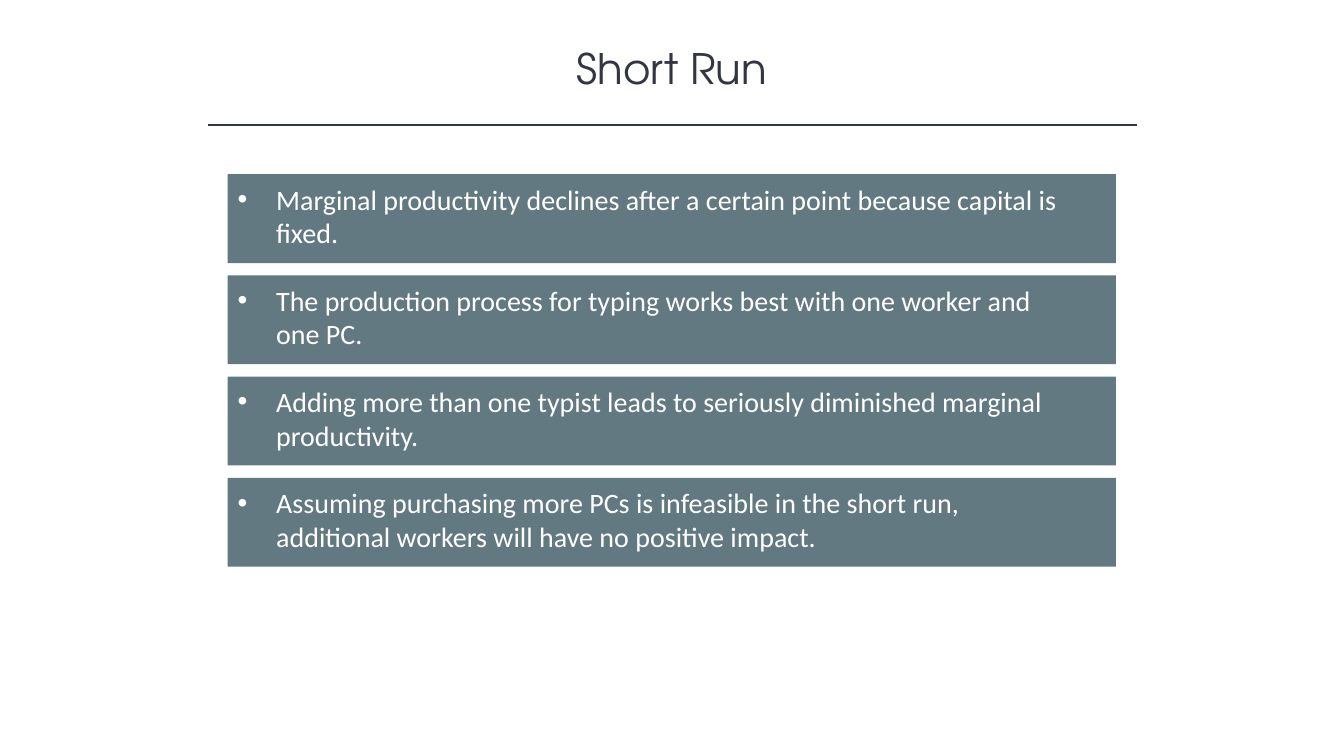
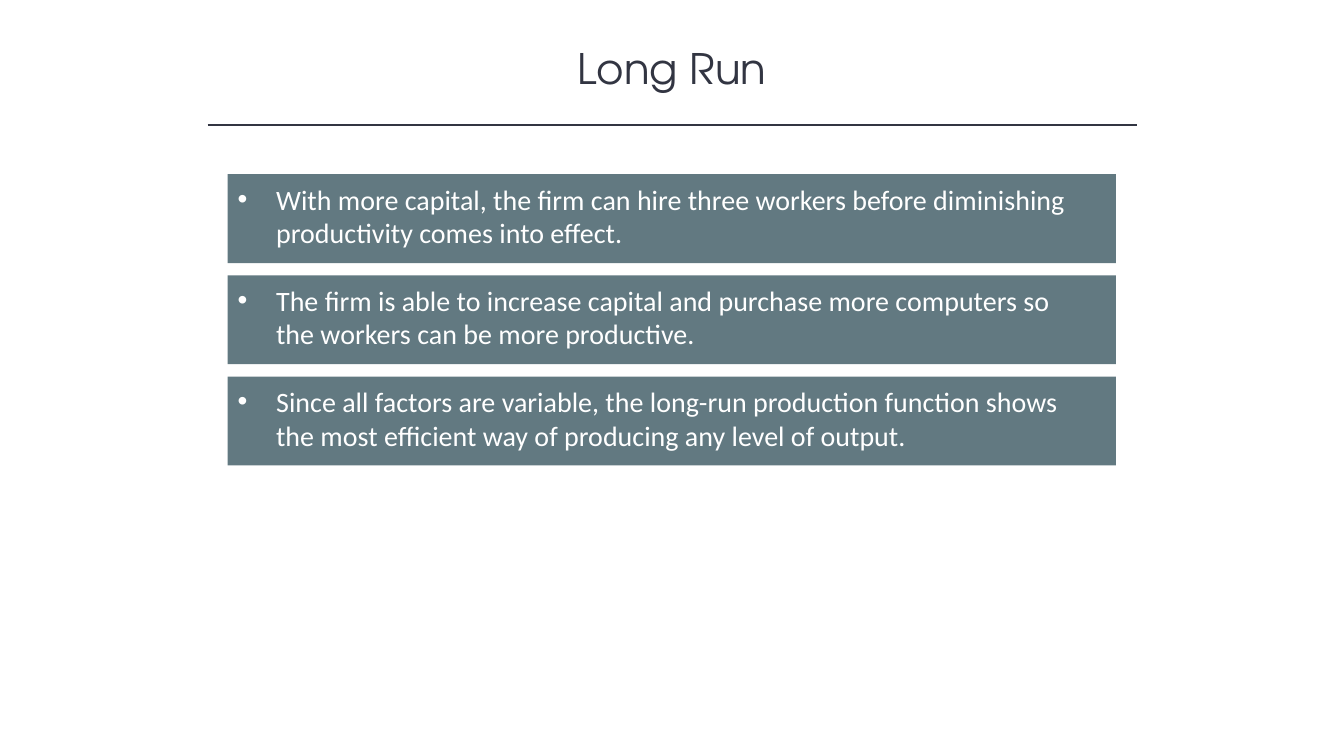
from dataclasses import dataclass

from lxml import etree
from pptx import Presentation
from pptx.dml.color import RGBColor
from pptx.enum.shapes import MSO_CONNECTOR, MSO_SHAPE
from pptx.enum.text import MSO_ANCHOR, PP_ALIGN
from pptx.oxml.ns import qn
from pptx.util import Cm, Pt

STRAIGHT = MSO_CONNECTOR.STRAIGHT
RECTANGLE = MSO_SHAPE.RECTANGLE
TOP, MIDDLE = MSO_ANCHOR.TOP, MSO_ANCHOR.MIDDLE
LEFT, CENTER = PP_ALIGN.LEFT, PP_ALIGN.CENTER
TITLE_ONLY = 5


@dataclass(frozen=True)
class Theme:
    ink: RGBColor = RGBColor(0x32, 0x35, 0x42)
    band: RGBColor = RGBColor(0x62, 0x79, 0x81)
    white: RGBColor = RGBColor(0xFF, 0xFF, 0xFF)
    title_font: str = "TeX Gyre Adventor"
    body_font: str = "Calibri"
    title_size: Pt = Pt(30)
    body_size: Pt = Pt(20)
    rule_width: Pt = Pt(1)


# Layout of the bands
BAND_LEFT, BAND_TOP = Cm(5.74), Cm(4.39)
BAND_WIDTH, BAND_HEIGHT = Cm(22.38), Cm(2.24)
BAND_PITCH = Cm(2.55)
BULLET_INDENT = Cm(0.97)


class Deck:
    def __init__(self, theme):
        self.theme = theme
        self.presentation = Presentation()
        self.presentation.slide_width = Cm(33.87)
        self.presentation.slide_height = Cm(19.05)
        self.page = None

    def add_page(self, title, points):
        layout = self.presentation.slide_layouts[TITLE_ONLY]
        self.page = self.presentation.slides.add_slide(layout)
        self.title(title)
        self.rule()
        for index, point in enumerate(points):
            self.band(point, BAND_TOP + index * BAND_PITCH)

    def style(self, paragraph, font_name, size, color):
        for span in paragraph.runs:
            span.font.name = font_name
            span.font.size = size
            span.font.color.rgb = color

    def title(self, text):
        box = self.page.shapes.title
        box.left, box.top = Cm(4.23), Cm(0.94)
        box.width, box.height = Cm(25.4), Cm(1.55)
        frame = box.text_frame
        frame.text = text
        frame.vertical_anchor = MIDDLE
        para = frame.paragraphs[0]
        para.alignment = CENTER
        self.style(para, self.theme.title_font, self.theme.title_size, self.theme.ink)

    def rule(self):
        line = self.page.shapes.add_connector(
            STRAIGHT, Cm(5.23), Cm(3.15), Cm(28.65), Cm(3.15))
        line.line.color.rgb = self.theme.ink
        line.line.width = self.theme.rule_width
        etree.SubElement(line._element.spPr, qn("a:effectLst"))

    def band(self, text, top):
        box = self.page.shapes.add_shape(
            RECTANGLE, BAND_LEFT, top, BAND_WIDTH, BAND_HEIGHT)
        box.shadow.inherit = False
        box.fill.solid()
        box.fill.fore_color.rgb = self.theme.band
        box.line.fill.background()
        frame = box.text_frame
        frame.word_wrap = True
        frame.vertical_anchor = TOP
        frame.margin_top = Cm(0.2)
        frame.margin_right = Cm(0.94)
        frame.text = text
        para = frame.paragraphs[0]
        para.alignment = LEFT
        self.bullet(para)
        self.style(para, self.theme.body_font, self.theme.body_size, self.theme.white)

    def bullet(self, paragraph):
        properties = paragraph._p.get_or_add_pPr()
        properties.set("marL", str(BULLET_INDENT))
        properties.set("indent", str(-BULLET_INDENT))
        etree.SubElement(properties, qn("a:buFont"), typeface="Arial")
        etree.SubElement(properties, qn("a:buChar"), char="•")


# Slide content
PAGES = {
    "Short Run": [
        "Marginal productivity declines after a certain point because capital is fixed.",
        "The production process for typing works best with one worker and one PC.",
        "Adding more than one typist leads to seriously diminished marginal productivity.",
        "Assuming purchasing more PCs is infeasible in the short run, "
        "additional workers will have no positive impact.",
    ],
    "Long Run": [
        "With more capital, the firm can hire three workers before diminishing "
        "productivity comes into effect.",
        "The firm is able to increase capital and purchase more computers so "
        "the workers can be more productive.",
        "Since all factors are variable, the long-run production function shows "
        "the most efficient way of producing any level of output.",
    ],
}


def main():
    deck = Deck(Theme())
    for title, points in PAGES.items():
        deck.add_page(title, points)
    deck.presentation.save("out.pptx")


if __name__ == "__main__":
    main()
